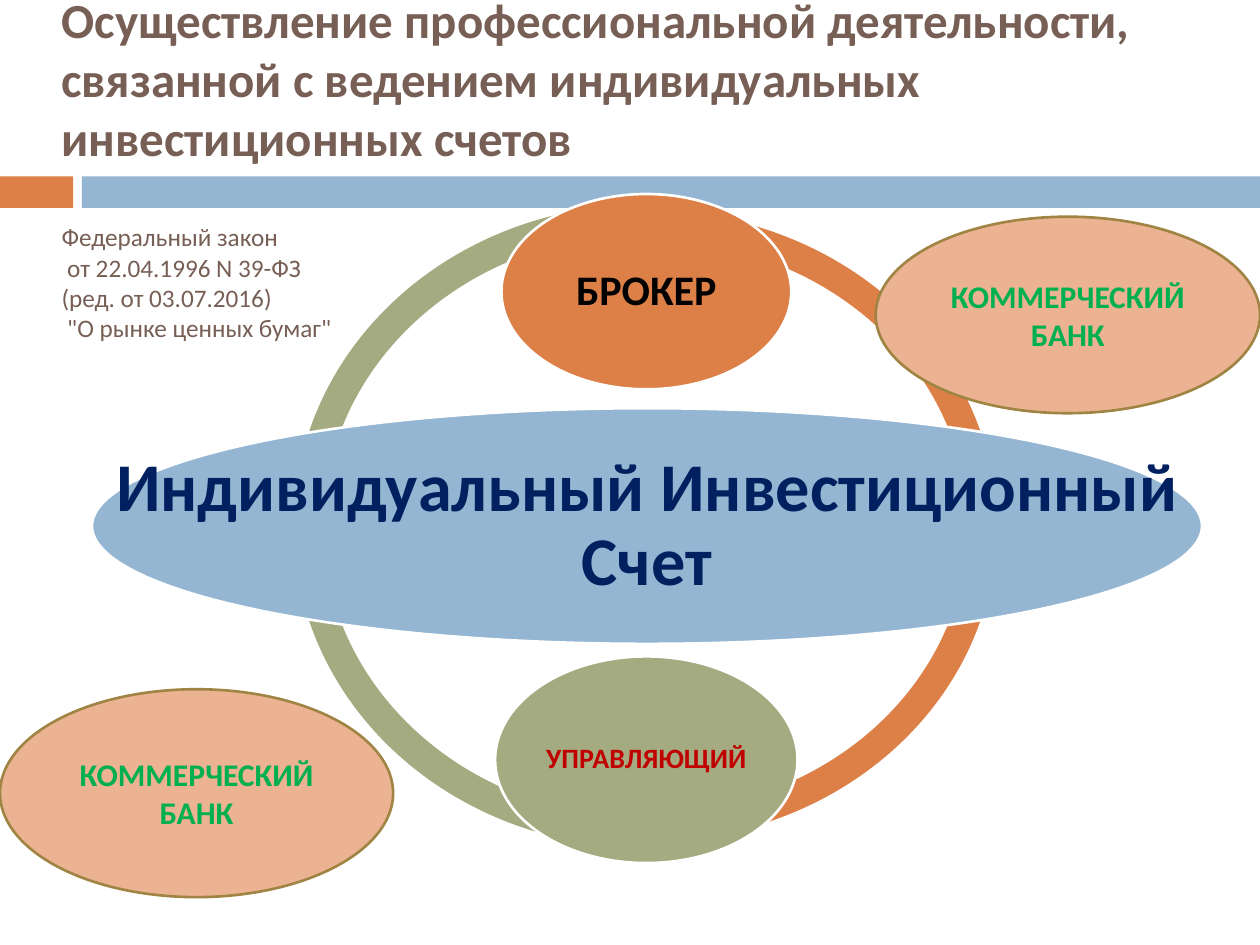
"""Build a slide on who may run individual investment accounts."""
from pptx import Presentation
from pptx.dml.color import RGBColor
from pptx.enum.shapes import MSO_SHAPE
from pptx.enum.text import MSO_ANCHOR, PP_ALIGN
from pptx.util import Inches, Pt

RECT, OVAL, ARC = MSO_SHAPE.RECTANGLE, MSO_SHAPE.OVAL, MSO_SHAPE.BLOCK_ARC
MIDDLE = MSO_ANCHOR.MIDDLE
LEFT, CENTER = PP_ALIGN.LEFT, PP_ALIGN.CENTER

ORANGE = RGBColor(0xDD, 0x80, 0x47)
BLUE = RGBColor(0x94, 0xB6, 0xD2)
OLIVE = RGBColor(0xA5, 0xAB, 0x81)
PEACH = RGBColor(0xEB, 0xB3, 0x91)
GOLD = RGBColor(0xA0, 0x84, 0x44)
BROWN = RGBColor(0x77, 0x5F, 0x55)
NAVY = RGBColor(0x00, 0x20, 0x60)
RED = RGBColor(0xC0, 0x00, 0x00)
GREEN = RGBColor(0x00, 0xB0, 0x50)
BLACK = RGBColor(0, 0, 0)
WHITE = RGBColor(255, 255, 255)

TITLE = ("Осуществление профессиональной деятельности, связанной с ведением "
         "индивидуальных инвестиционных счетов")
LAW = "\v".join(["Федеральный закон", " от 22.04.1996 N 39-ФЗ",
                 "(ред. от 03.07.2016)", " \"О рынке ценных бумаг\""])
BANK = "КОММЕРЧЕСКИЙ БАНК"

HEADINGS = [(TITLE, (0.39, 0.03, 9.38, 1.18), 28, True),
            (LAW, (0.39, 1.75, 3, 0.98), 14.4, False)]
BARS = [((0, 1.4, 0.58, 0.25), ORANGE), ((0.65, 1.4, 9.35, 0.25), BLUE)]
ARCS = [((2.33, 1.62, 5.6, 5.11), OLIVE, (54, 162, 0.046)),
        ((2.35, 1.67, 5.56, 5.01), ORANGE, (162, 54, 0.046))]
ROLES = [("Индивидуальный Инвестиционный Счет", (0.73, 3.24, 8.81, 1.87), BLUE, 39, NAVY),
         ("БРОКЕР", (3.98, 1.54, 2.3, 1.55), ORANGE, 24, BLACK),
         ("УПРАВЛЯЮЩИЙ", (3.93, 5.21, 2.4, 1.64), OLIVE, 16, RED)]
BANKS = [(6.95, 1.72, 3.05, 1.56), (0, 5.47, 3.12, 1.65)]


def add_shape(s, kind, box, fill, line=None):
    sp = s.shapes.add_shape(kind, *map(Inches, box))
    sp.shadow.inherit = False
    sp.fill.solid()
    sp.fill.fore_color.rgb = fill
    if line is None:
        sp.line.fill.background()
    else:
        sp.line.color.rgb = line
        sp.line.width = Pt(1.5)
    return sp


def write(sp, text, size, color, bold=True, align=CENTER, spacing=1.0):
    tf = sp.text_frame
    tf.word_wrap = True
    tf.vertical_anchor = MIDDLE
    p = tf.paragraphs[0]
    p.text = text
    p.alignment = align
    p.line_spacing = spacing
    p.font.name = "Calibri"
    p.font.size = Pt(size)
    p.font.bold = bold
    p.font.color.rgb = color
    return tf


def main():
    prs = Presentation()
    prs.slide_width, prs.slide_height = Inches(10), Inches(7.5)
    s = prs.slides.add_slide(prs.slide_layouts[6])

    for box, fill in BARS:
        add_shape(s, RECT, box, fill)
    for text, box, size, bold in HEADINGS:
        sp = s.shapes.add_textbox(*map(Inches, box))
        write(sp, text, size, BROWN, bold, LEFT)
    for box, fill, angles in ARCS:
        sp = add_shape(s, ARC, box, fill)
        for i, value in enumerate(angles):
            sp.adjustments[i] = value
    for text, box, fill, size, color in ROLES:
        add_shape(s, OVAL, box, fill, WHITE)
        label = s.shapes.add_textbox(*map(Inches, box))
        tf = write(label, text, size, color, spacing=0.9)
        tf.margin_left = tf.margin_right = Inches(0.05)
    for box in BANKS:
        write(add_shape(s, OVAL, box, PEACH, GOLD), BANK, 18, GREEN)

    prs.save("out.pptx")


if __name__ == "__main__":
    main()
